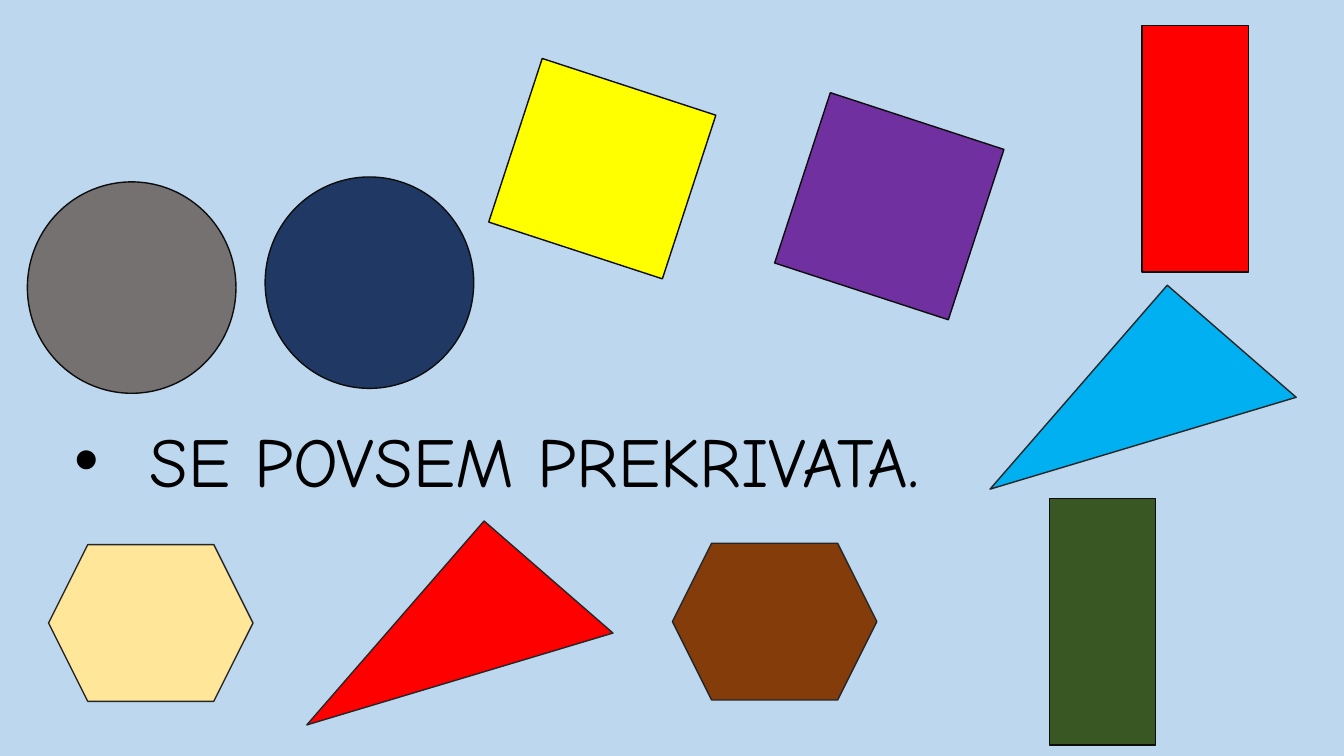
from lxml import etree
from pptx import Presentation
from pptx.dml.color import RGBColor
from pptx.enum.shapes import MSO_SHAPE as Preset
from pptx.enum.text import MSO_ANCHOR as Anchor, MSO_AUTO_SIZE as AutoSize, PP_ALIGN as Align
from pptx.oxml.ns import qn
from pptx.util import Pt

COLOURS = {
    "sky": "BDD7EE", "black": "000000", "outline": "0D0D0D", "soft outline": "262626",
    "grey": "767171", "navy": "203864", "yellow": "FFFF00", "purple": "7030A0",
    "red": "FF0000", "green": "385723", "blue": "00B0F0", "cream": "FFE699",
    "brown": "843C0B",
}


def colour(name):
    return RGBColor.from_string(COLOURS[name])


def write(para, text, *, font, size, ink="black", align=Align.LEFT):
    """Add one formatted span to a paragraph."""
    para.alignment = align
    span = para.add_run()
    span.text = text
    span.font.name = font
    span.font.size = Pt(size)
    span.font.color.rgb = colour(ink)


class SlideBuilder:
    """Holds the style and the current slide."""
    font = "Comic Neue"
    text_size = 50
    line_width = 1

    def __init__(self, deck, background):
        self.page = deck.slides.add_slide(deck.slide_layouts[6])
        fill = self.page.background.fill
        fill.solid()
        fill.fore_color.rgb = colour(background)

    def bullet(self, text, left, top, width, height, indent):
        box = self.page.shapes.add_textbox(Pt(left), Pt(top), Pt(width), Pt(height))
        frame = box.text_frame
        frame.word_wrap = False
        frame.auto_size = AutoSize.SHAPE_TO_FIT_TEXT
        para = frame.paragraphs[0]
        write(para, text, font=self.font, size=self.text_size, align=Align.CENTER)
        # Hanging bullet
        props = para._p.get_or_add_pPr()
        props.set("marL", str(Pt(indent)))
        props.set("indent", str(-Pt(indent)))
        etree.SubElement(props, qn("a:buFont")).set("typeface", "Arial")
        etree.SubElement(props, qn("a:buChar")).set("char", "•")

    def figure(self, preset, left, top, size, fill, line="outline", rotation=0):
        width, height = size
        shape = self.page.shapes.add_shape(preset, Pt(left), Pt(top), Pt(width), Pt(height))
        shape.rotation = rotation
        shape.shadow.inherit = False
        shape.fill.solid()
        shape.fill.fore_color.rgb = colour(fill)
        shape.line.color.rgb = colour(line)
        shape.line.width = Pt(self.line_width)
        shape.text_frame.vertical_anchor = Anchor.MIDDLE

    def pair(self, preset, size, *members, **style):
        """Draw matching figures, each given as left, top and fill."""
        for left, top, fill in members:
            self.figure(preset, left, top, size, fill, **style)


def main():
    deck = Presentation()
    deck.slide_width, deck.slide_height = Pt(960), Pt(540)
    slide = SlideBuilder(deck, "sky")

    # Statement
    slide.bullet("SE POVSEM PREKRIVATA.", 0, 294.5, 710, 67.7, indent=54)

    # Circles and upright rectangles
    slide.pair(Preset.OVAL, (149, 151), (19.6, 129.9, "grey"), (189.4, 126.4, "navy"))
    slide.pair(Preset.RECTANGLE, (76, 176), (815.8, 18.2, "red"), (749.6, 356.2, "green"))

    # Tilted squares, the second slightly taller
    slide.figure(Preset.RECTANGLE, 365, 59, (130.5, 123), "yellow", rotation=18.1)
    slide.figure(Preset.RECTANGLE, 570, 83.3, (130.5, 128), "purple", rotation=18.1)

    # Triangles and hexagons
    slide.pair(Preset.RIGHT_TRIANGLE, (193, 122), (720, 255.6, "blue"), (232, 424, "red"),
               line="soft outline", rotation=131)
    slide.pair(Preset.HEXAGON, (146, 112), (34.7, 389, "cream"), (480.3, 388, "brown"),
               line="soft outline")

    deck.save("out.pptx")


if __name__ == "__main__":
    main()
